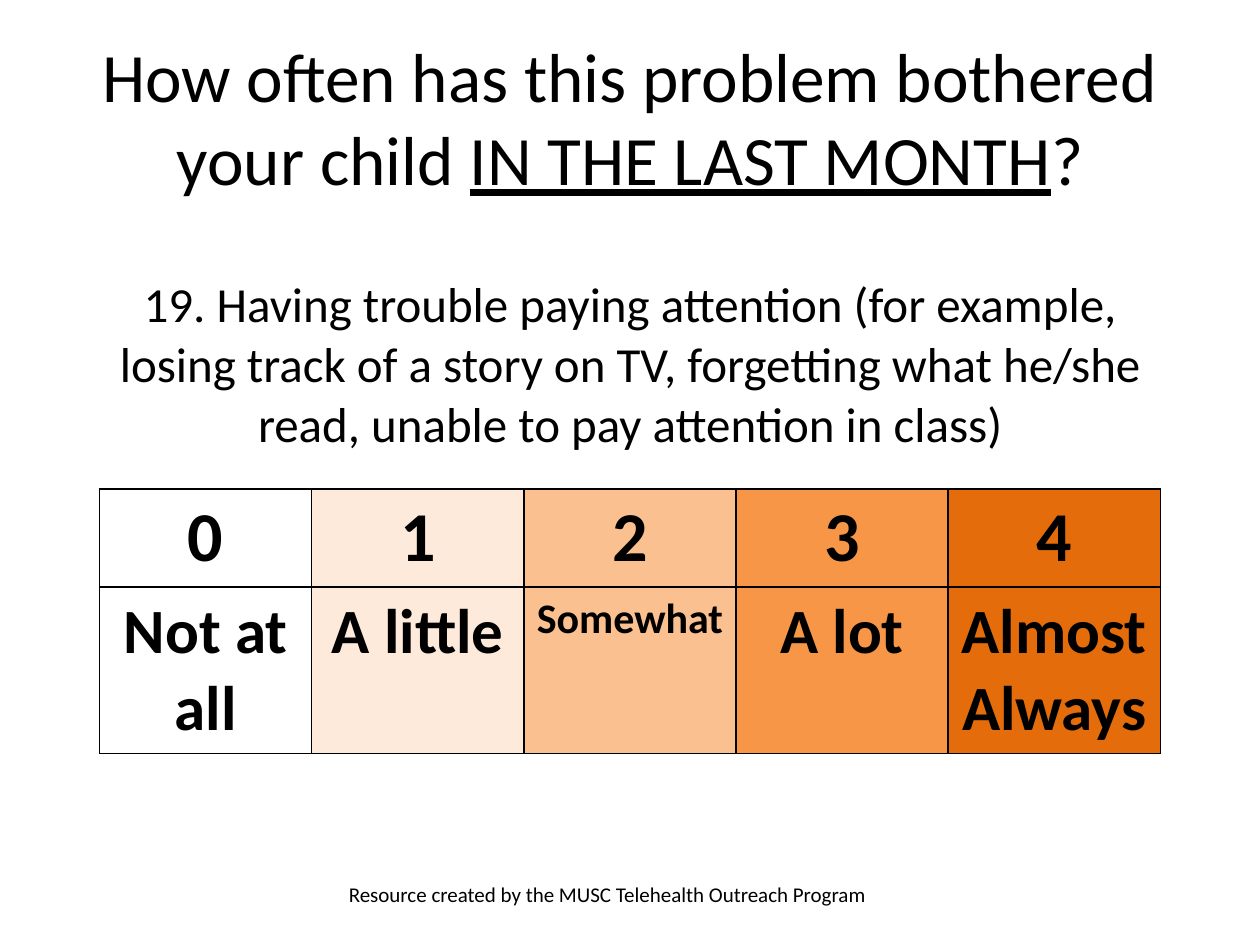
from dataclasses import dataclass

from lxml.etree import SubElement
from pptx import Presentation
from pptx.dml.color import RGBColor
from pptx.enum.text import MSO_ANCHOR, PP_ALIGN
from pptx.oxml.ns import qn
from pptx.util import Inches, Pt


@dataclass(frozen=True)
class Theme:
    """Colours, font and type sizes of the slide."""
    font: str = "Calibri"
    ink: str = "000000"
    scale: tuple = ("FFFFFF", "FDEADA", "FAC090", "F79646", "E46C0A")
    title: float = 39.6
    question: float = 28
    score: float = 40
    answer: float = 36
    long_answer: float = 24
    footer: float = 12
    border: float = 1


THEME = Theme()
ANSWERS = (
    ("Not at all", THEME.answer),
    ("A little", THEME.answer),
    ("Somewhat", THEME.long_answer),
    ("A lot", THEME.answer),
    ("Almost Always", THEME.answer),
)


def style(p, size, align=PP_ALIGN.CENTER, bold=False):
    """Set the font and alignment of a paragraph."""
    p.alignment = align
    p.font.name = THEME.font
    p.font.size = Pt(size)
    p.font.bold = bold
    p.font.color.rgb = RGBColor.from_string(THEME.ink)


def add_borders(cell):
    """Draw a line on all four sides of a cell."""
    tc_pr = cell._tc.get_or_add_tcPr()
    for i, side in enumerate(("a:lnL", "a:lnR", "a:lnT", "a:lnB")):
        ln = tc_pr.makeelement(qn(side), {"w": str(Pt(THEME.border))})
        fill = SubElement(ln, qn("a:solidFill"))
        SubElement(fill, qn("a:srgbClr"), val=THEME.ink)
        tc_pr.insert(i, ln)


def add_plain_table(slide, rows, cols, box):
    """Add a table without header or banding."""
    table = slide.shapes.add_table(rows, cols, *box).table
    table.first_row = False
    table.horz_banding = False
    return table


def add_title(slide, box):
    """Place the title with its underlined time span."""
    title = slide.shapes.title
    title.left, title.top, title.width, title.height = box
    tf = title.text_frame
    tf.word_wrap = True
    tf.vertical_anchor = MSO_ANCHOR.MIDDLE
    p = tf.paragraphs[0]
    style(p, THEME.title)
    for text, underline in (
        ("How often has this problem bothered your child ", False),
        ("IN THE LAST MONTH", True),
        ("?", False),
    ):
        r = p.add_run()
        r.text = text
        r.font.underline = underline


def add_question(slide, box):
    """Place the question in a one-cell table."""
    cell = add_plain_table(slide, 1, 1, box).cell(0, 0)
    cell.margin_left = cell.margin_right = Inches(0.05)
    cell.margin_top = cell.margin_bottom = 0
    cell.fill.background()
    cell.text = (
        "19. Having trouble paying attention (for example, losing track of a "
        "story on TV, forgetting what he/she read, unable to pay attention in class)"
    )
    style(cell.text_frame.paragraphs[0], THEME.question)


def add_scale(slide, box):
    """Place the answer scale, scores above wordings."""
    table = add_plain_table(slide, 2, len(ANSWERS), box)
    table.rows[0].height = Inches(0.78)
    table.rows[1].height = box[3] - table.rows[0].height
    for col, (answer, size) in enumerate(ANSWERS):
        for row, (text, pt) in enumerate(((str(col), THEME.score), (answer, size))):
            cell = table.cell(row, col)
            cell.text = text
            style(cell.text_frame.paragraphs[0], pt, bold=True)
            cell.fill.solid()
            cell.fill.fore_color.rgb = RGBColor.from_string(THEME.scale[col])
            add_borders(cell)


def add_footer(slide, box):
    """Place the credit line."""
    tf = slide.shapes.add_textbox(*box).text_frame
    tf.word_wrap = True
    p = tf.paragraphs[0]
    p.text = "Resource created by the MUSC Telehealth Outreach Program"
    style(p, THEME.footer, PP_ALIGN.LEFT)


def main():
    """Build and save the slide."""
    prs = Presentation()
    prs.slide_width, prs.slide_height = Inches(10), Inches(7.5)
    s = prs.slides.add_slide(prs.slide_layouts[5])
    left, width = Inches(0.79), Inches(8.42)
    add_title(s, (Inches(0.5), Inches(0.3), Inches(9), Inches(1.25)))
    add_footer(s, (Inches(2.67), Inches(6.95), Inches(4.5), Inches(0.4)))
    add_scale(s, (left, Inches(3.88), width, Inches(2.1)))
    add_question(s, (left, Inches(2.19), width, Inches(1.4)))
    prs.save("out.pptx")


if __name__ == "__main__":
    main()
